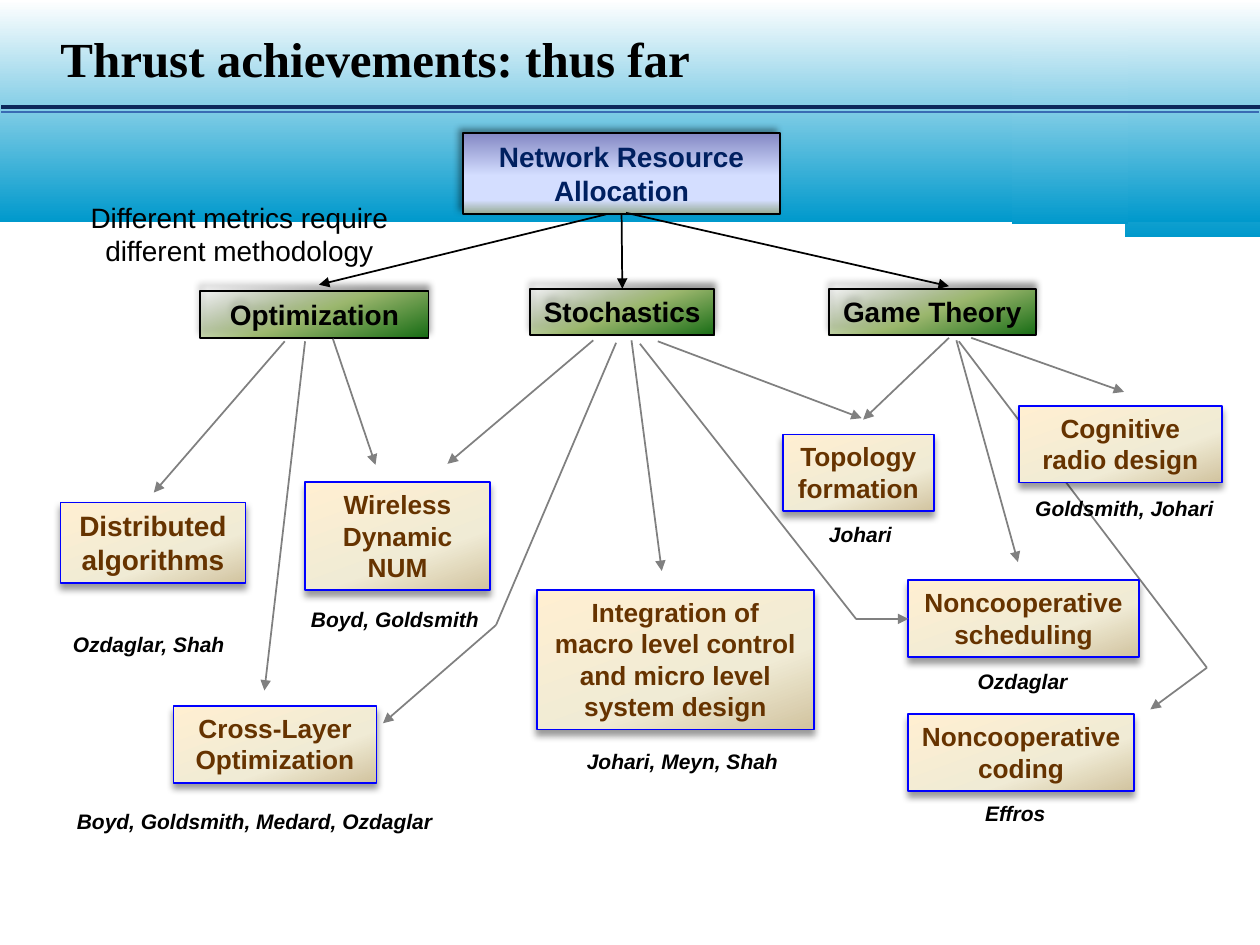
from dataclasses import dataclass
from typing import Any, NamedTuple, Optional

import lxml.etree
import pptx
import pptx.dml.color
import pptx.enum.shapes
import pptx.enum.text
import pptx.oxml.ns
import pptx.util

Cm = pptx.util.Cm
Pt = pptx.util.Pt
qn = pptx.oxml.ns.qn
ALIGN = pptx.enum.text.PP_ALIGN
ANCHOR = pptx.enum.text.MSO_ANCHOR
FIT = pptx.enum.text.MSO_AUTO_SIZE
RECT = pptx.enum.shapes.MSO_SHAPE.RECTANGLE
LINE = pptx.enum.shapes.MSO_CONNECTOR.STRAIGHT


@dataclass(frozen=True)
class Theme:
    sans: str = "Arial"
    serif: str = "Times New Roman"
    black: str = "000000"
    gray: str = "808080"
    navy: str = "0C285B"
    steel: str = "396BB3"
    title: int = 28
    large: int = 16
    body: int = 15
    small: int = 12


class Stop(NamedTuple):
    pos: int
    color: str
    alpha: int = 100


class Style(NamedTuple):
    """Look of a box; shade is the shadow's direction in degrees."""
    stops: tuple[Stop, ...]
    angle: int
    edge: str
    ink: str
    shade: int


class Box(NamedTuple):
    text: str
    left: float
    top: float
    width: float
    height: float
    style: Style
    size: int = Theme.body
    wrap: bool = True
    anchor: Any = ANCHOR.TOP


class Label(NamedTuple):
    text: str
    left: float
    top: float
    width: float


class Link(NamedTuple):
    x1: float
    y1: float
    x2: float
    y2: float
    color: str = Theme.gray
    head: bool = True
    width: float = 1


THEME = Theme()
SKY = (Stop(0, "FFFFFF"), Stop(100, "0099CC"))
GREEN = Style((Stop(0, "DDEBCF", 0), Stop(50, "9CB86E"), Stop(100, "156B13")),
              70, THEME.black, THEME.black, 270)
SAND = Style((Stop(0, "FFEFD1"), Stop(65, "F0EBD5"), Stop(100, "D1C39F")),
             70, "0000FF", "663300", 90)
BLUE = Style((Stop(0, "8488C4"), Stop(53, "D4DEFF"), Stop(83, "D4DEFF"),
              Stop(100, "96AB94")), 90, THEME.black, "002060", 225)

BANDS = [(22.68, 2.72, 4.78), (0, 25.4, 4.47), (20.4, 2.34, 4.52)]
RULES = [Link(0.03, 2.16, 25.4, 2.16, THEME.navy, False, 2.25),
         Link(0.03, 2.26, 25.37, 2.26, THEME.steel, False, 0.75)]
BEHIND = Link(19.33, 6.88, 24.33, 13.46, head=False)

ROOT = Box("Network Resource Allocation", 9.34, 2.68, 6.38, 1.63, BLUE,
           THEME.large, anchor=ANCHOR.MIDDLE)
MIDDLE = Box("Stochastics", 10.69, 5.82, 3.71, 0.94, GREEN, THEME.large, False)
SCHED = Box("Noncooperative scheduling", 18.31, 11.7, 4.65, 1.55, SAND)
BOXES = [
    Box("Optimization", 4.04, 5.87, 4.6, 0.94, GREEN, THEME.large),
    MIDDLE,
    Box("Game Theory", 16.71, 5.82, 4.17, 0.94, GREEN, THEME.large, False),
    Box("Distributed algorithms", 1.22, 10.13, 3.73, 1.63, SAND, THEME.large),
    Box("Wireless Dynamic NUM", 6.15, 9.72, 3.73, 2.18, SAND),
    Box("Cross-Layer Optimization", 3.5, 14.23, 4.09, 1.55, SAND),
    Box("Integration of macro level control and micro level system design",
        10.82, 11.89, 5.59, 2.82, SAND),
    Box("Topology formation", 15.78, 8.76, 3.05, 1.55, SAND),
    SCHED,
    Box("Noncooperative coding", 18.31, 14.4, 4.55, 1.55, SAND),
    ROOT,
    Box("Cognitive radio design", 20.54, 8.18, 4.09, 1.55, SAND),
]
LABELS = [
    Label("Ozdaglar, Shah", 1.22, 12.6, 3.61),
    Label("Boyd, Goldsmith", 6.02, 12.11, 3.91),
    Label("Boyd, Goldsmith, Medard, Ozdaglar", 1.3, 16.18, 7.7),
    Label("Johari, Meyn, Shah", 11.58, 14.96, 4.37),
    Label("Goldsmith, Johari", 20.62, 9.86, 4.11),
    Label("Johari", 16.46, 10.39, 1.78),
    Label("Ozdaglar", 19.46, 13.36, 2.4),
    Label("Effros", 19.61, 16.02, 1.73),
]
LINKS = [
    Link(12.62, 4.29, 19.13, 5.77, THEME.black),
    Link(12.22, 4.32, 6.43, 5.74, THEME.black),
    Link(5.74, 6.88, 3.1, 9.93),
    Link(6.71, 6.83, 7.57, 9.37),
    Link(6.15, 6.88, 5.33, 13.92),
    Link(11.96, 6.86, 9.02, 9.35),
    Link(12.73, 6.86, 13.34, 11.51),
    Link(12.42, 6.91, 10, 12.6, head=False),
    Link(10, 12.6, 7.72, 14.58),
    Link(12.9, 6.93, 17.26, 12.48, head=False),
    Link(13.26, 6.88, 17.37, 8.43),
    Link(19.58, 6.81, 22.66, 7.9),
    Link(19.13, 6.81, 17.4, 8.46),
    Link(19.28, 6.86, 20.52, 11.33),
    Link(24.33, 13.46, 23.19, 14.3),
]


def rgb(code: str) -> Any:
    return pptx.dml.color.RGBColor.from_string(code)


def assign(item: Any, values: dict[str, Any]) -> None:
    for name, value in values.items():
        setattr(item, name, value)


def add_node(parent: Any, tag: str, **attrs: Any) -> Any:
    return lxml.etree.SubElement(parent, qn(tag), {k: str(v) for k, v in attrs.items()})


def add_color(parent: Any, code: str, alpha: int) -> None:
    node = add_node(parent, "a:srgbClr", val=code)
    if alpha < 100:
        add_node(node, "a:alpha", val=alpha * 1000)


def shade_fill(shape: Any, stops: tuple[Stop, ...], angle: int) -> None:
    """Fill with a linear gradient, its angle measured clockwise."""
    shape.fill.gradient()
    shape.fill.gradient_angle = 360 - angle
    group = shape._element.spPr.find(qn("a:gradFill")).find(qn("a:gsLst"))
    for old in list(group):
        group.remove(old)
    for stop in stops:
        add_color(add_node(group, "a:gs", pos=stop.pos * 1000), stop.color, stop.alpha)


def write(shape: Any, text: str, font: dict[str, Any], color: str,
          frame: dict[str, Any], para: dict[str, Any]) -> None:
    assign(shape.text_frame, frame)
    first = shape.text_frame.paragraphs[0]
    assign(first, para)
    run = first.add_run()
    run.text = text
    assign(run.font, {"name": THEME.sans, **font})
    run.font.color.rgb = rgb(color)


def draw_band(shapes: Any, left: float, width: float, height: float) -> None:
    band = shapes.add_shape(RECT, Cm(left), Cm(0), Cm(width), Cm(height))
    band.shadow.inherit = False
    shade_fill(band, SKY, 90)
    band.line.fill.background()


def draw_box(shapes: Any, box: Box) -> Any:
    look = box.style
    shape = shapes.add_shape(RECT, Cm(box.left), Cm(box.top), Cm(box.width), Cm(box.height))
    shade_fill(shape, look.stops, look.angle)
    shape.line.color.rgb = rgb(look.edge)
    shape.line.width = Pt(1)
    shape.shadow.inherit = False
    glow = add_node(shape._element.spPr.find(qn("a:effectLst")), "a:outerShdw",
                    blurRad=Pt(4), dist=Pt(3), dir=look.shade * 60000, rotWithShape=0)
    add_color(glow, THEME.black, 40)
    write(shape, box.text, {"size": Pt(box.size), "bold": True}, look.ink,
          {"word_wrap": box.wrap, "vertical_anchor": box.anchor,
           "auto_size": FIT.SHAPE_TO_FIT_TEXT}, {"alignment": ALIGN.CENTER})
    return shape


def draw_label(shapes: Any, label: Label) -> None:
    shape = shapes.add_textbox(Cm(label.left), Cm(label.top), Cm(label.width), Cm(0.76))
    write(shape, label.text, {"size": Pt(THEME.small), "bold": True, "italic": True},
          THEME.black, {"word_wrap": False, "auto_size": FIT.SHAPE_TO_FIT_TEXT}, {})


def draw_link(shapes: Any, link: Link, start: Optional[tuple[Any, int]] = None,
              end: Optional[tuple[Any, int]] = None) -> None:
    line = shapes.add_connector(LINE, Cm(link.x1), Cm(link.y1), Cm(link.x2), Cm(link.y2))
    if start:
        line.begin_connect(*start)
    if end:
        line.end_connect(*end)
    line.line.color.rgb = rgb(link.color)
    line.line.width = Pt(link.width)
    props = line._element.spPr
    if link.head:
        add_node(props.find(qn("a:ln")), "a:tailEnd", type="triangle")
    add_node(props, "a:effectLst")


def main() -> None:
    deck = pptx.Presentation()
    assign(deck, {"slide_width": Cm(25.4), "slide_height": Cm(19.05)})
    shapes = deck.slides.add_slide(deck.slide_layouts[6]).shapes
    for band in BANDS:
        draw_band(shapes, *band)
    for link in [*RULES, BEHIND]:
        draw_link(shapes, link)

    title = shapes.add_textbox(Cm(1.22), Cm(0.54), Cm(22.2), Cm(1.45))
    edges = dict.fromkeys(("margin_left", "margin_top", "margin_right", "margin_bottom"), 0)
    write(title, "Thrust achievements: thus far",
          {"name": THEME.serif, "size": Pt(THEME.title), "bold": True}, THEME.black,
          {"word_wrap": True, "vertical_anchor": ANCHOR.MIDDLE, **edges},
          {"line_spacing": 0.85})
    note = shapes.add_textbox(Cm(0.94), Cm(3.91), Cm(7.77), Cm(1.63))
    write(note, "Different metrics require different methodology",
          {"size": Pt(THEME.large)}, THEME.black,
          {"word_wrap": True, "auto_size": FIT.SHAPE_TO_FIT_TEXT},
          {"alignment": ALIGN.CENTER})

    drawn = {box.text: draw_box(shapes, box) for box in BOXES}
    for label in LABELS:
        draw_label(shapes, label)
    for link in LINKS:
        draw_link(shapes, link)
    draw_link(shapes, Link(12.54, 4.32, 12.54, 5.82, THEME.black),
              (drawn[ROOT.text], 2), (drawn[MIDDLE.text], 0))
    draw_link(shapes, Link(17.26, 12.48, 18.31, 12.48), end=(drawn[SCHED.text], 1))
    deck.save("out.pptx")


if __name__ == "__main__":
    main()
